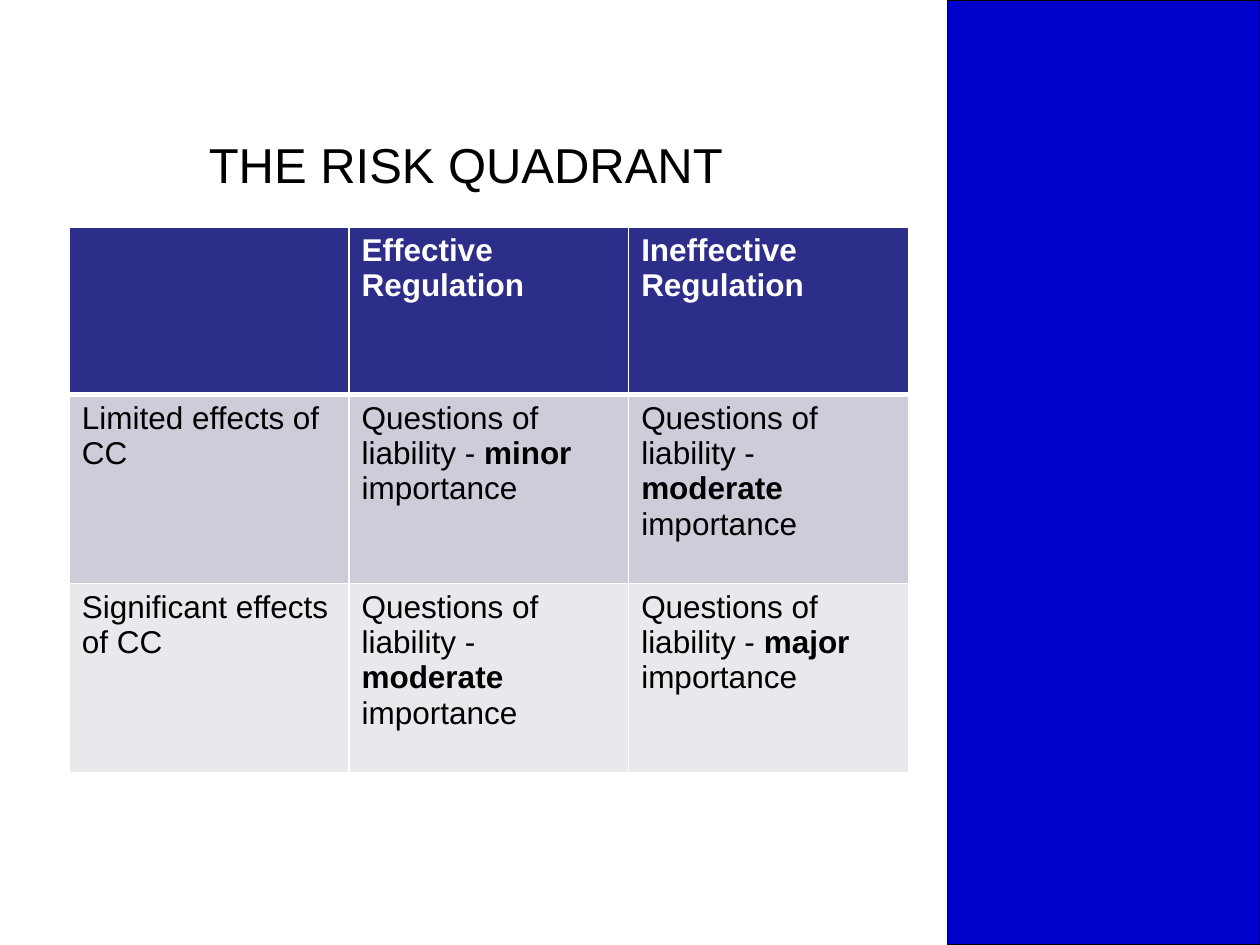
from lxml import etree
from pptx import Presentation, util as u
from pptx.dml.color import RGBColor
from pptx.enum import shapes
from pptx.oxml.ns import qn

COLORS = {
    "white": "FFFFFF",
    "black": "000000",
    "band": "0000CC",
    "header": "2D2D8A",
    "limited": "CDCDDA",
    "significant": "E8E8ED",
}


def liability(level):
    return [("Questions of liability - ", False), (level, True), (" importance", False)]


ROWS = [
    ("header", 1.33, [[], [("Effective Regulation", True)], [("Ineffective Regulation", True)]]),
    ("limited", 1.5, [[("Limited effects of CC", False)], liability("minor"), liability("moderate")]),
    ("significant", 1.5, [[("Significant effects of CC", False)], liability("moderate"), liability("major")]),
]


class SlideBuilder:
    def __init__(self, page, font="Arial"):
        self.page = page
        self.font = font

    def color(self, name):
        return RGBColor.from_string(COLORS[name])

    def add_spans(self, para, spans, size, color):
        for words, bold in spans:
            span = para.add_run()
            span.text = words
            values = {"name": self.font, "size": u.Pt(size), "bold": bold}
            for key, value in values.items():
                setattr(span.font, key, value)
            span.font.color.rgb = self.color(color)

    def rectangle(self, area, fill, line):
        box = self.page.shapes.add_shape(shapes.MSO_SHAPE.RECTANGLE, *map(u.Inches, area))
        box.shadow.inherit = False
        box.fill.solid()
        box.fill.fore_color.rgb = self.color(fill)
        box.line.color.rgb = self.color(line)
        box.line.width = u.Pt(0.75)

    def title(self, area, words):
        box = self.page.shapes.add_textbox(*map(u.Inches, area))
        box.text_frame.word_wrap = True
        self.add_spans(box.text_frame.paragraphs[0], [(words, False)], 28, "black")

    def borders(self, cell, widths):
        properties = cell._tc.get_or_add_tcPr()
        for side, width in widths.items():
            line = etree.SubElement(properties, qn(f"a:ln{side}"), w=str(u.Pt(width)))
            fill = etree.SubElement(line, qn("a:solidFill"))
            etree.SubElement(fill, qn("a:srgbClr"), val=COLORS["white"])

    def table(self, left, top, width, rows):
        height = sum(row[1] for row in rows)
        columns = len(rows[0][2])
        area = map(u.Inches, (left, top, width, height))
        table = self.page.shapes.add_table(len(rows), columns, *area).table
        for column in table.columns:
            column.width = u.Inches(width / columns)
        for index, (fill, row_height, contents) in enumerate(rows):
            table.rows[index].height = u.Inches(row_height)
            widths = {"L": 1, "R": 1, "T": 3 if index == 1 else 1, "B": 3 if index == 0 else 1}
            for cell, spans in zip(table.rows[index].cells, contents):
                self.borders(cell, widths)
                cell.fill.solid()
                cell.fill.fore_color.rgb = self.color(fill)
                ink = "white" if index == 0 else "black"
                self.add_spans(cell.text_frame.paragraphs[0], spans, 18, ink)


def main():
    deck = Presentation()
    deck.slide_width, deck.slide_height = u.Inches(10), u.Inches(7.5)
    builder = SlideBuilder(deck.slides.add_slide(deck.slide_layouts[6]))
    builder.rectangle((7.52, 0, 2.48, 7.5), "band", "black")
    builder.table(0.55, 1.8, 6.66, ROWS)
    builder.title((1.56, 1.02, 4.64, 0.57), "THE RISK QUADRANT")
    deck.save("out.pptx")


if __name__ == "__main__":
    main()
